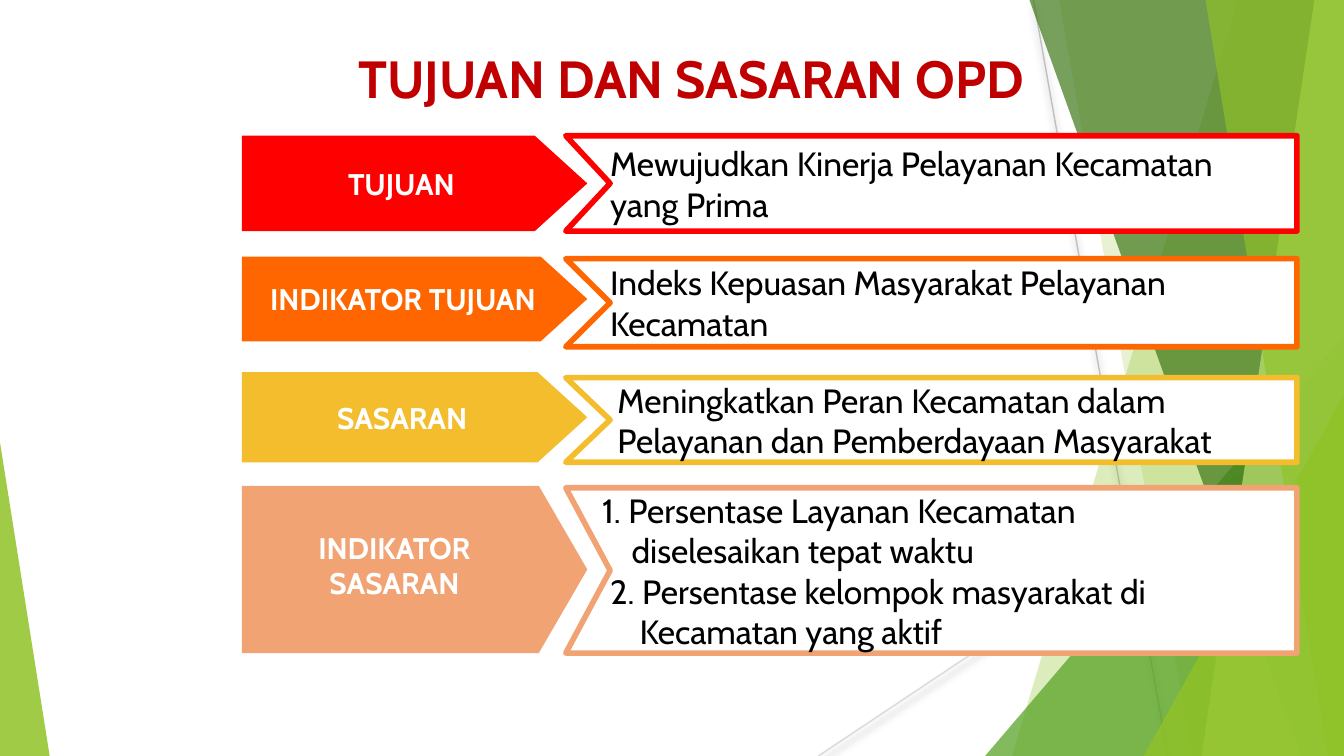
from dataclasses import dataclass

from lxml import etree
from pptx import Presentation
from pptx import util as u
from pptx.dml.color import RGBColor
from pptx.enum import shapes, text
from pptx.oxml import ns


@dataclass(frozen=True)
class Theme:
    font: str = "Cabin"
    title: str = "C00000"
    light: str = "FFFFFF"
    dark: str = "000000"
    leaf: str = "90C226"
    grass: str = "54A021"
    forest: str = "3F7819"
    lime: str = "C0E474"
    title_size: int = 28
    label_size: int = 16
    body_size: int = 18


theme = Theme()
deck = Presentation()
deck.slide_width = u.Inches(10)
deck.slide_height = deck.slide_width * 9 // 16
floor = 56.25
col, row = deck.slide_width / 100, deck.slide_height / floor
slide = deck.slides.add_slide(deck.slide_layouts[6])
canvas = slide.shapes


def paint(shape, color, opacity=100):
    shape.shadow.inherit = False
    shape.fill.solid()
    shape.fill.fore_color.rgb = RGBColor.from_string(color)
    shape.line.fill.background()
    if opacity < 100:
        tint = shape.element.spPr.find(".//" + ns.qn("a:srgbClr"))
        etree.SubElement(tint, ns.qn("a:alpha"), val=str(opacity * 1000))


def write(shape, words, size, color, bold, align):
    frame = shape.text_frame
    frame.text = words
    frame.word_wrap = True
    frame.vertical_anchor = text.MSO_ANCHOR.MIDDLE
    for paragraph in frame.paragraphs:
        paragraph.alignment = align
        for run in paragraph.runs:
            run.font.name = theme.font
            run.font.size = u.Pt(size)
            run.font.bold = bold
            run.font.color.rgb = RGBColor.from_string(color)


for x1, y1, x2, y2, color in [(76.9, 0, 86.9, floor, "BFBFBF"), (100, 30.2, 60.9, floor, "D9D9D9")]:
    ray = canvas.add_connector(
        shapes.MSO_CONNECTOR.STRAIGHT, int(x1 * col), int(y1 * row), int(x2 * col), int(y2 * row))
    ray.line.color.rgb = RGBColor.from_string(color)
    ray.line.width = u.Pt(0.75)
    effects = etree.SubElement(ray.element.spPr, ns.qn("a:effectLst"))
    shade = etree.SubElement(
        effects, ns.qn("a:outerShdw"), blurRad=str(u.Pt(4)), dist=str(u.Pt(3)), dir="5400000")
    black = etree.SubElement(shade, ns.qn("a:srgbClr"), val=theme.dark)
    etree.SubElement(black, ns.qn("a:alpha"), val="35000")

blades = [
    (92.1, 75.3, theme.leaf, 30),
    (78.8, 88.7, theme.leaf, 20),
    (73.3, 25, 26.7, 1, theme.grass, 72),
    (76.6, 96.8, theme.forest, 70),
    (97.8, 89.4, theme.lime, 70),
    (89.7, 98.8, theme.leaf, 65),
    (85.1, 29.4, 14.9, 1, theme.leaf, 80),
    (0, 32.9, 3.7, 0, theme.leaf, 85),
]
for *outline, color, opacity in blades:
    if len(outline) == 2:
        top_x, foot_x = outline
        pen = canvas.build_freeform(top_x * col, 0, scale=1)
        pen.add_line_segments([(100 * col, 0), (100 * col, floor * row), (foot_x * col, floor * row)])
        blade = pen.convert_to_shape()
    else:
        left, top, width, apex = outline
        blade = canvas.add_shape(
            shapes.MSO_SHAPE.ISOSCELES_TRIANGLE,
            int(left * col), int(top * row), int(width * col), int((floor - top) * row))
        blade.adjustments[0] = apex
    paint(blade, color, opacity)

goals = [
    ("TUJUAN", "FF0000", 10.1, 7.1, 10.1, 7.1, 0.55, [3.3, 3.3],
     "Mewujudkan Kinerja Pelayanan Kecamatan\nyang Prima"),
    ("INDIKATOR TUJUAN", "FF6600", 19.1, 6.3, 19.25, 6.55, 0.55, [3.3, 3.3],
     "Indeks Kepuasan Masyarakat Pelayanan\nKecamatan"),
    ("SASARAN", "F4BD2D", 27.7, 6.7, 28.1, 6.3, 0.55, [3.85, 3.85],
     "Meningkatkan Peran Kecamatan dalam\nPelayanan dan Pemberdayaan Masyarakat"),
    ("INDIKATOR\nSASARAN", "F1A374", 36.15, 12.45, 36.3, 12.3, 0.29, [2.7, 4.9, 3.3, 5.5],
     "1. Persentase Layanan Kecamatan\ndiselesaikan tepat waktu\n"
     "2. Persentase kelompok masyarakat di\nKecamatan yang aktif"),
]
for label, color, top, height, panel_top, panel_height, point, indents, detail in goals:
    tag = canvas.add_shape(
        shapes.MSO_SHAPE.PENTAGON, int(18 * col), int(top * row), int(25.7 * col), int(height * row))
    tag.adjustments[0] = point
    paint(tag, color)
    caption = tag
    if "\n" in label:
        caption = canvas.add_textbox(int(19.7 * col), int(38 * row), int(19.3 * col), int(8.1 * row))
    write(caption, label, theme.label_size, theme.light, True, text.PP_ALIGN.CENTER)

    pen = canvas.build_freeform(42.1 * col, panel_top * row, scale=1)
    bottom = panel_top + panel_height
    pen.add_line_segments([
        (96.5 * col, panel_top * row), (96.5 * col, bottom * row), (42.1 * col, bottom * row),
        (45.4 * col, (panel_top + panel_height / 2) * row)])
    panel = pen.convert_to_shape()
    paint(panel, theme.light)
    panel.line.color.rgb = RGBColor.from_string(color)
    panel.line.width = u.Pt(3)
    write(panel, detail, theme.body_size, theme.dark, False, text.PP_ALIGN.LEFT)
    frame = panel.text_frame
    frame.margin_left = frame.margin_top = frame.margin_bottom = 0
    for paragraph, indent in zip(frame.paragraphs, indents):
        paragraph._p.get_or_add_pPr().set("marL", str(int(indent * col)))

heading = canvas.add_textbox(int(20.1 * col), int(3.7 * row), int(62.6 * col), int(4.1 * row))
write(heading, "TUJUAN DAN SASARAN OPD", theme.title_size, theme.title, True, text.PP_ALIGN.CENTER)

deck.save("out.pptx")
